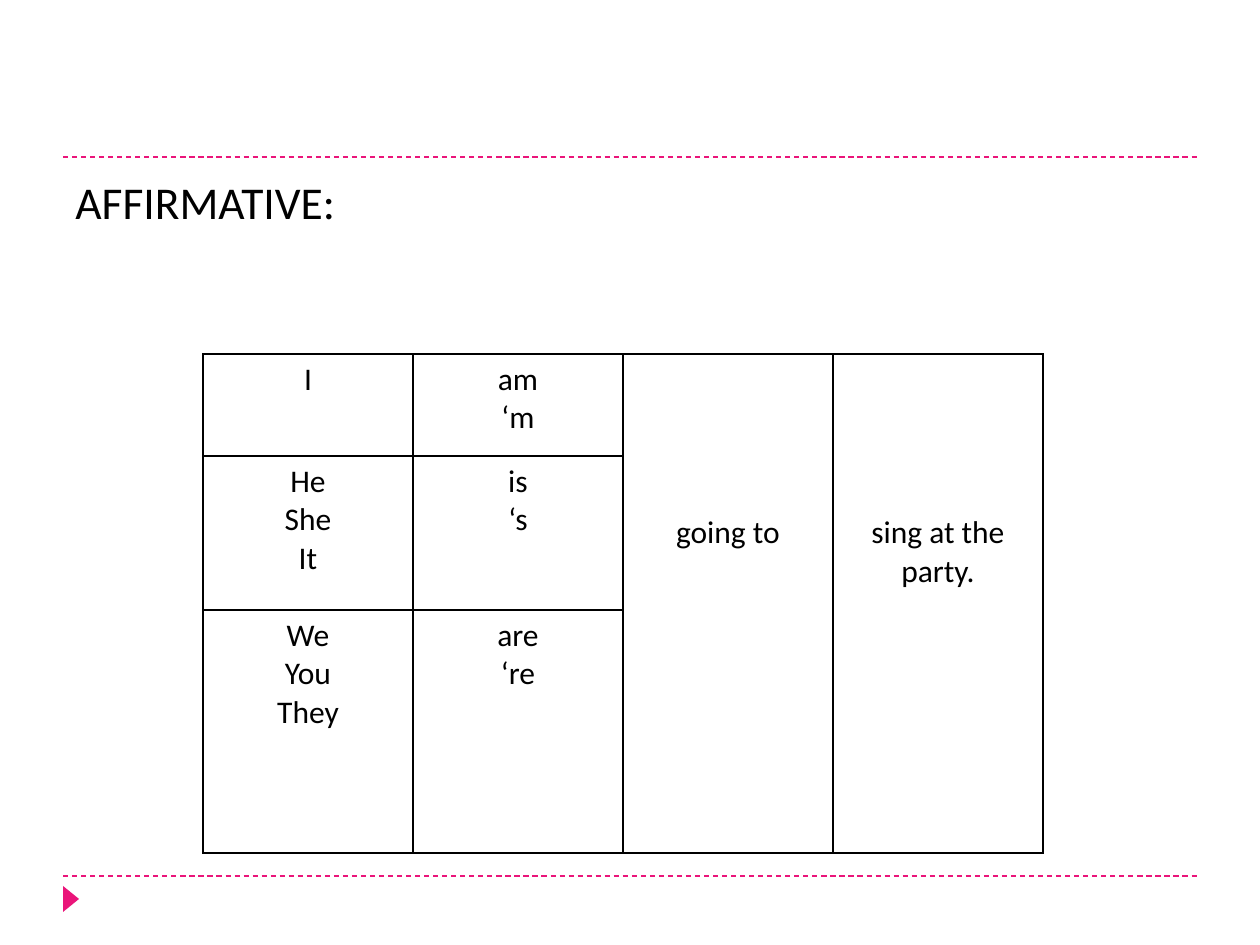
from lxml import etree
from pptx import Presentation
from pptx.dml.color import RGBColor
from pptx.enum.dml import MSO_LINE
from pptx.enum.shapes import MSO_CONNECTOR, MSO_SHAPE
from pptx.enum.text import PP_ALIGN
from pptx.oxml.ns import qn
from pptx.util import Pt

SCALE = 914400 / 126  # EMU per px
STRAIGHT = MSO_CONNECTOR.STRAIGHT
TRIANGLE = MSO_SHAPE.ISOSCELES_TRIANGLE
DASH = MSO_LINE.DASH
LEFT, CENTER = PP_ALIGN.LEFT, PP_ALIGN.CENTER
FONT = "Calibri"
COLORS = {"accent": "EA157A", "text": "000000", "border": "000000"}

ROW_HEIGHTS = (102, 154, 243)
COLUMN_WIDTH = 210
PRONOUNS = ("I", "He\nShe\nIt", "We\nYou\nThey")
VERBS = ("am\n‘m", "is\n‘s", "are\n‘re")
ENDINGS = ("going to", "sing at the party.")
ENDING_MARGIN = 160


def px(value):
    return round(value * SCALE)


def color(name):
    return RGBColor.from_string(COLORS[name])


def write_text(frame, text, size, align=LEFT):
    frame.word_wrap = True
    for index, line in enumerate(text.split("\n")):
        paragraph = frame.add_paragraph() if index else frame.paragraphs[0]
        paragraph.alignment = align
        run = paragraph.add_run()
        run.text = line
        run.font.name = FONT
        run.font.size = Pt(size)
        run.font.color.rgb = color("text")


def add_dashed_rule(slide, left, top, width):
    rule = slide.shapes.add_connector(
        STRAIGHT, px(left), px(top), px(left + width), px(top))
    rule.line.color.rgb = color("accent")
    rule.line.width = Pt(0.75)
    rule.line.dash_style = DASH
    etree.SubElement(rule.element.spPr, qn("a:effectLst"))


def add_frame(slide, left, top, width, height):
    """Dashed rules above and below the content, with the corner marker."""
    add_dashed_rule(slide, left, top + height, width)
    add_dashed_rule(slide, left, top, width)
    marker = slide.shapes.add_shape(
        TRIANGLE, px(left - 5), px(top + height + 15), px(26), px(16))
    marker.rotation = 90
    marker.shadow.inherit = False
    marker.fill.solid()
    marker.fill.fore_color.rgb = color("accent")
    marker.line.fill.background()


def add_heading(slide, left, top, width, height):
    box = slide.shapes.add_textbox(px(left), px(top), px(width), px(height))
    write_text(box.text_frame, "AFFIRMATIVE:", 26)


def style_cell(cell):
    properties = cell._tc.get_or_add_tcPr()
    for side in ("a:lnL", "a:lnR", "a:lnT", "a:lnB"):
        border = etree.SubElement(properties, qn(side), w=str(Pt(1)))
        fill = etree.SubElement(border, qn("a:solidFill"))
        etree.SubElement(fill, qn("a:srgbClr"), val=COLORS["border"])
    cell.fill.background()


def add_grammar_table(slide, left, top):
    column_count = 2 + len(ENDINGS)
    table = slide.shapes.add_table(
        len(ROW_HEIGHTS), column_count, px(left), px(top),
        px(COLUMN_WIDTH * column_count), px(sum(ROW_HEIGHTS))).table
    table.first_row = False
    table.horz_banding = False
    for column in table.columns:
        column.width = px(COLUMN_WIDTH)
    for row, height in zip(table.rows, ROW_HEIGHTS):
        row.height = px(height)
    for cell in table.iter_cells():
        style_cell(cell)

    # Pronouns and verb forms, row by row
    for row, texts in enumerate(zip(PRONOUNS, VERBS)):
        for column, text in enumerate(texts):
            write_text(table.cell(row, column).text_frame, text, 18, CENTER)

    # Sentence endings shared by all rows
    for column, text in enumerate(ENDINGS, start=2):
        cell = table.cell(0, column)
        cell.merge(table.cell(len(ROW_HEIGHTS) - 1, column))
        cell.margin_top = px(ENDING_MARGIN)
        write_text(cell.text_frame, text, 18, CENTER)


def main():
    presentation = Presentation()
    presentation.slide_width = px(1260)
    presentation.slide_height = px(945)
    slide = presentation.slides.add_slide(presentation.slide_layouts[6])
    add_frame(slide, 63, 157, 1134, 719)
    add_heading(slide, 63, 168, 1134, 680)
    add_grammar_table(slide, 203, 354)
    presentation.save("out.pptx")


if __name__ == "__main__":
    main()
